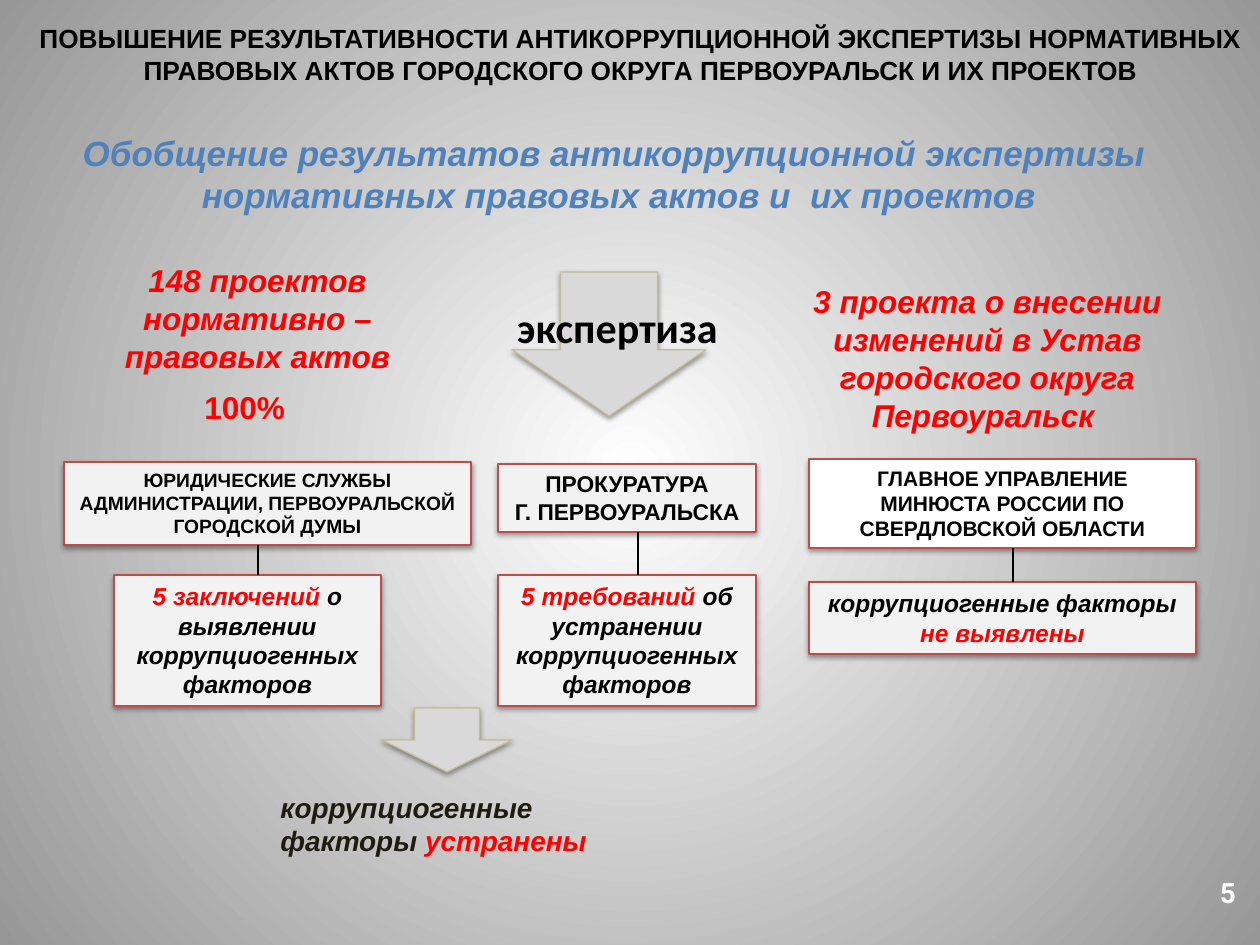
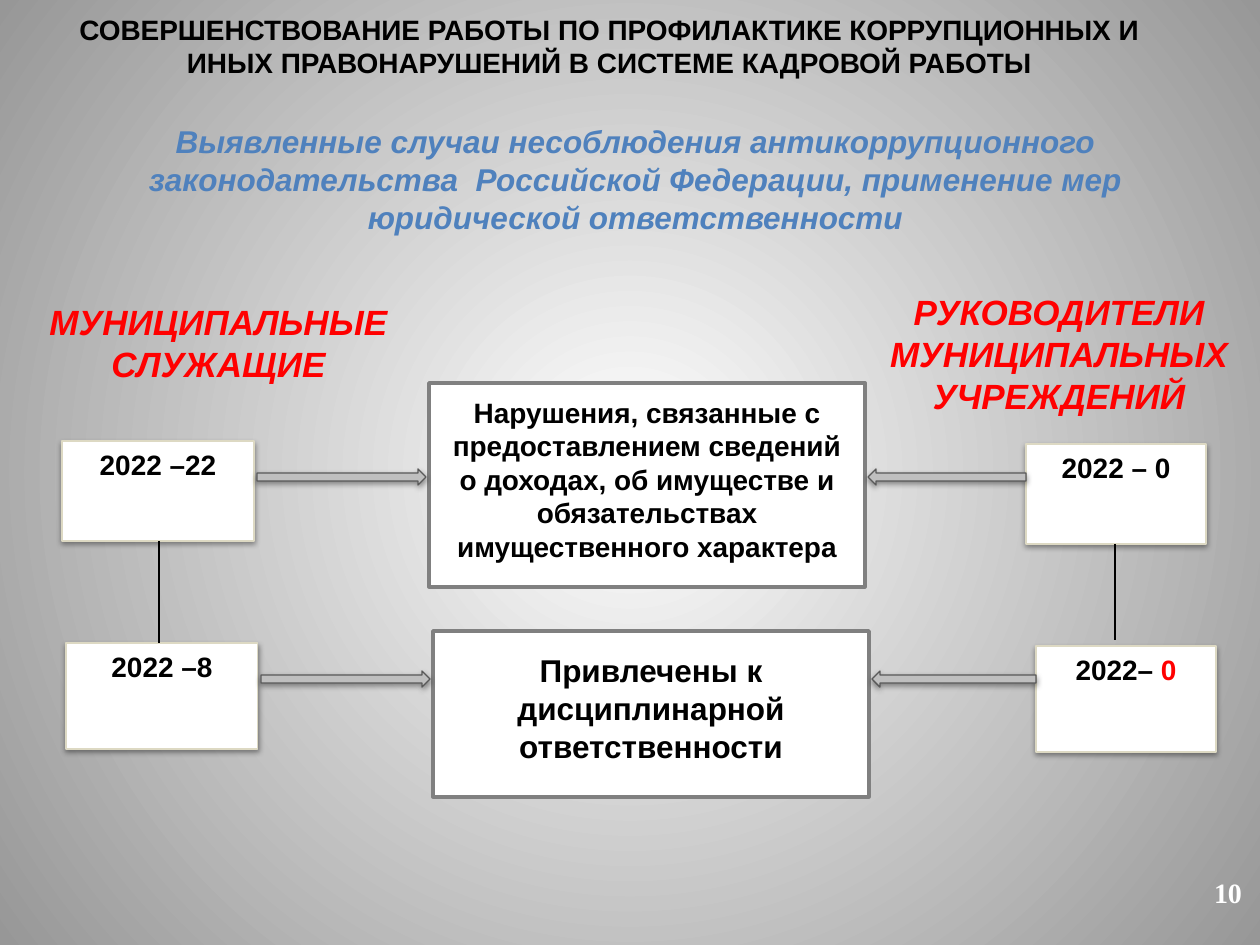
from typing import NamedTuple

from lxml import etree
from pptx import Presentation
from pptx.dml.color import RGBColor
from pptx.enum.shapes import MSO_CONNECTOR, MSO_SHAPE
from pptx.enum.text import MSO_ANCHOR, MSO_AUTO_SIZE, PP_ALIGN
from pptx.oxml import parse_xml
from pptx.oxml.ns import nsdecls, qn
from pptx.util import Pt

PX = 914400 / 126
TITLE_ONLY = 5
LEFT, CENTER = PP_ALIGN.LEFT, PP_ALIGN.CENTER
TOP, MIDDLE = MSO_ANCHOR.TOP, MSO_ANCHOR.MIDDLE
NO_AUTOFIT = MSO_AUTO_SIZE.NONE
STRAIGHT = MSO_CONNECTOR.STRAIGHT
RECTANGLE = MSO_SHAPE.RECTANGLE
DOWN_ARROW = MSO_SHAPE.DOWN_ARROW
LEFT_ARROW = MSO_SHAPE.LEFT_ARROW
RIGHT_ARROW = MSO_SHAPE.RIGHT_ARROW

BLACK = RGBColor(0x00, 0x00, 0x00)
WHITE = RGBColor(0xFF, 0xFF, 0xFF)
RED = RGBColor(0xFF, 0x00, 0x00)
BLUE = RGBColor(0x4F, 0x81, 0xBD)
INK = RGBColor(0x1E, 0x1C, 0x11)
EDGE_GRAY = RGBColor(0x97, 0x97, 0x97)
PALE = RGBColor(0xF2, 0xF2, 0xF2)
BRICK = RGBColor(0xBF, 0x4C, 0x48)
SILVER = RGBColor(0xD9, 0xD9, 0xD9)
KHAKI = RGBColor(0xC4, 0xBD, 0x97)
SAND = RGBColor(0xDD, 0xD9, 0xC3)
FRAME_GRAY = RGBColor(0x80, 0x80, 0x80)
ARROW_GRAY = RGBColor(0xBF, 0xBF, 0xBF)
ARROW_EDGE = RGBColor(0x59, 0x59, 0x59)


class Box(NamedTuple):
    """A rectangle in px."""
    x: int
    y: int
    w: int
    h: int


def emu(*lengths):
    """Turn px lengths into EMU."""
    return [round(length * PX) for length in lengths]


def write(shape, paragraphs, size, color=BLACK, italic=False, align=CENTER,
          anchor=TOP, font="Arial"):
    """Fill a shape with bold paragraphs, each a list of (text, colour) spans or a string."""
    frame = shape.text_frame
    frame.word_wrap = True
    frame.auto_size = NO_AUTOFIT
    frame.vertical_anchor = anchor
    frame.margin_left = frame.margin_right = emu(12.6)[0]
    frame.margin_top = frame.margin_bottom = emu(6.3)[0]
    for index, spans in enumerate(paragraphs):
        para = frame.add_paragraph() if index else frame.paragraphs[0]
        para.alignment = align
        if isinstance(spans, str):
            spans = [(spans, color)]
        for text, span_color in spans:
            span = para.add_run()
            span.text = text
            span.font.name = font
            span.font.size = Pt(size)
            span.font.bold = True
            span.font.italic = italic
            span.font.color.rgb = span_color


def label(page, box, paragraphs, size, **style):
    """Add a text box."""
    write(page.shapes.add_textbox(*emu(*box)), paragraphs, size, **style)


def figure(page, kind, box, fill, line, width=0.75, shadow=True):
    """Add a filled preset shape, with a soft shadow beneath if wanted."""
    shape = page.shapes.add_shape(kind, *emu(*box))
    shape.fill.solid()
    shape.fill.fore_color.rgb = fill
    shape.line.color.rgb = line
    shape.line.width = Pt(width)
    shape.shadow.inherit = False
    if shadow:
        effects = shape.element.spPr.find(qn("a:effectLst"))
        effects.append(parse_xml(
            f'<a:outerShdw {nsdecls("a")} blurRad="40000" dist="20000" dir="5400000" '
            'rotWithShape="0"><a:srgbClr val="000000"><a:alpha val="38000"/>'
            '</a:srgbClr></a:outerShdw>'))
    return shape


def stem(page, x, top, bottom):
    """Add a thin vertical line."""
    line = page.shapes.add_connector(STRAIGHT, *emu(x, top, x, bottom))
    line.line.color.rgb = BLACK
    line.line.width = Pt(0.75)
    etree.SubElement(line.element.spPr, qn("a:effectLst"))


def paint_background(deck):
    """Give the slide master a radial gray gradient."""
    common = deck.slide_master.element.cSld
    common.remove(common.find(qn("p:bg")))
    common.insert(0, parse_xml(
        f'<p:bg {nsdecls("p", "a")}><p:bgPr><a:gradFill rotWithShape="1"><a:gsLst>'
        f'<a:gs pos="0"><a:srgbClr val="{WHITE}"/></a:gs>'
        f'<a:gs pos="100000"><a:srgbClr val="{EDGE_GRAY}"/></a:gs></a:gsLst>'
        '<a:path path="circle"><a:fillToRect l="50000" t="50000" r="50000" b="50000"/>'
        '</a:path></a:gradFill><a:effectLst/></p:bgPr></p:bg>'))


def add_page(deck, title, title_box, title_size, number, number_font):
    """Add a slide with its title and page number."""
    page = deck.slides.add_slide(deck.slide_layouts[TITLE_ONLY])
    heading = page.shapes.title
    heading.left, heading.top, heading.width, heading.height = emu(*title_box)
    write(heading, [title], title_size)
    label(page, Box(1196, 869, 64, 47), [number], 16, color=WHITE, font=number_font)
    return page


def branch(page, box, head, head_size, head_height, head_fill, result, result_box):
    """Place an authority at the top of the box and its result below, joined by a stem."""
    authority = figure(page, RECTANGLE, Box(box.x, box.y, box.w, head_height),
                       head_fill, BRICK)
    write(authority, head, head_size)
    dx, width, height = result_box
    top = box.y + box.h - height
    finding = figure(page, RECTANGLE, Box(box.x + dx, top, width, height), PALE, BRICK)
    write(finding, [result], 14, italic=True)
    stem(page, box.x + dx + width // 2 + 11, box.y + head_height, top)


def big_arrow(page, box, head=0.5):
    """Add a broad arrow that points down."""
    arrow = figure(page, DOWN_ARROW, box, SILVER, KHAKI)
    arrow.adjustments[1] = head


def measure(page, box, card_top, card_height, left, finding, size, right):
    """Place a finding in the middle of the box with a figure on each side pointing to it."""
    left_width, right_width, gap = 192, 180, 3
    centre = Box(box.x + 367, box.y, 436, box.h)
    left_card = Box(box.x, box.y + card_top, left_width, card_height)
    right_card = Box(box.x + box.w - right_width, left_card.y + 3, right_width, card_height)

    panel = figure(page, RECTANGLE, centre, WHITE, FRAME_GRAY, 2, shadow=False)
    write(panel, [finding], size, anchor=MIDDLE)
    panel.text_frame.margin_bottom = emu(18)[0]
    for card, text in ((left_card, left), (right_card, right)):
        write(figure(page, RECTANGLE, card, WHITE, SAND), [text], 16)

    centre_right = centre.x + centre.w
    spans = ((RIGHT_ARROW, left_card.x + left_width + gap, centre.x - gap),
             (LEFT_ARROW, centre_right + gap, right_card.x))
    for kind, start, end in spans:
        figure(page, kind, Box(start, left_card.y + 28, end - start, 16),
               ARROW_GRAY, ARROW_EDGE)


def build_expertise(deck):
    """Build the slide on the review of legal acts."""
    page = add_page(
        deck, "ПОВЫШЕНИЕ РЕЗУЛЬТАТИВНОСТИ АНТИКОРРУПЦИОННОЙ ЭКСПЕРТИЗЫ НОРМАТИВНЫХ "
        "ПРАВОВЫХ АКТОВ ГОРОДСКОГО ОКРУГА ПЕРВОУРАЛЬСК И ИХ ПРОЕКТОВ",
        Box(21, 16, 1239, 77), 15, "5", "Roboto")
    label(page, Box(44, 125, 1150, 97),
          ["Обобщение результатов антикоррупционной экспертизы ",
           "нормативных правовых актов и  их проектов"], 20, color=BLUE, italic=True)
    big_arrow(page, Box(512, 272, 194, 144), 0.46)
    label(page, Box(498, 295, 239, 63), ["экспертиза"], 24, font="Calibri")
    label(page, Box(64, 255, 387, 127), ["148 проектов нормативно – правовых актов"],
          18, color=RED, italic=True)
    label(page, Box(192, 382, 112, 50), ["100%"], 18, color=RED, align=LEFT)
    label(page, Box(794, 276, 387, 165),
          ["3 проекта о внесении изменений в Устав городского округа Первоуральск "],
          18, color=RED, italic=True)
    branch(page, Box(64, 462, 407, 244),
           ["ЮРИДИЧЕСКИЕ СЛУЖБЫ АДМИНИСТРАЦИИ, ПЕРВОУРАЛЬСКОЙ ГОРОДСКОЙ ДУМЫ"],
           11, 83, PALE,
           [("5 заключений", RED), (" о выявлении коррупциогенных факторов", BLACK)],
           (50, 267, 131))
    branch(page, Box(498, 464, 258, 242), ["ПРОКУРАТУРА", "Г. ПЕРВОУРАЛЬСКА"],
           13, 68, PALE,
           [("5 требований ", RED), ("об устранении коррупциогенных факторов", BLACK)],
           (0, 258, 131))
    branch(page, Box(809, 459, 387, 195),
           ["ГЛАВНОЕ УПРАВЛЕНИЕ МИНЮСТА РОССИИ ПО СВЕРДЛОВСКОЙ ОБЛАСТИ"],
           12, 89, WHITE,
           [("коррупциогенные факторы ", BLACK), ("не выявлены", RED)],
           (0, 387, 72))
    big_arrow(page, Box(382, 708, 130, 64))
    label(page, Box(268, 784, 407, 81),
          [[("коррупциогенные факторы ", INK), ("устранены", RED)]],
          16, italic=True, align=LEFT)


def build_violations(deck):
    """Build the slide on violations and liability."""
    page = add_page(
        deck, "СОВЕРШЕНСТВОВАНИЕ РАБОТЫ ПО ПРОФИЛАКТИКЕ КОРРУПЦИОННЫХ И ИНЫХ "
        "ПРАВОНАРУШЕНИЙ В СИСТЕМЕ КАДРОВОЙ РАБОТЫ",
        Box(44, 6, 1131, 81), 16, "10", "Times New Roman")
    label(page, Box(44, 116, 1183, 127),
          ["Выявленные случаи несоблюдения антикоррупционного законодательства  "
           "Российской Федерации, применение мер юридической ответственности"],
          18, color=BLUE, italic=True)
    label(page, Box(35, 294, 367, 97), ["МУНИЦИПАЛЬНЫЕ", "СЛУЖАЩИЕ"],
          20, color=RED, italic=True)
    label(page, Box(873, 284, 372, 140), ["РУКОВОДИТЕЛИ МУНИЦИПАЛЬНЫХ", "УЧРЕЖДЕНИЙ"],
          20, color=RED, italic=True)
    measure(page, Box(62, 383, 1144, 204), 58, 100, "2022 –22",
            "Нарушения, связанные с предоставлением сведений о доходах, об имуществе "
            "и обязательствах имущественного характера", 16, "2022 – 0")
    measure(page, Box(66, 631, 1150, 166), 12, 106, "2022 –8",
            "Привлечены к дисциплинарной ответственности", 18,
            [("2022– ", BLACK), ("0", RED)])
    stem(page, 159, 541, 643)
    stem(page, 1115, 544, 640)


def main():
    """Build and save the deck."""
    deck = Presentation()
    deck.slide_width, deck.slide_height = emu(1260, 945)
    paint_background(deck)
    build_expertise(deck)
    build_violations(deck)
    deck.save("out.pptx")


if __name__ == "__main__":
    main()
